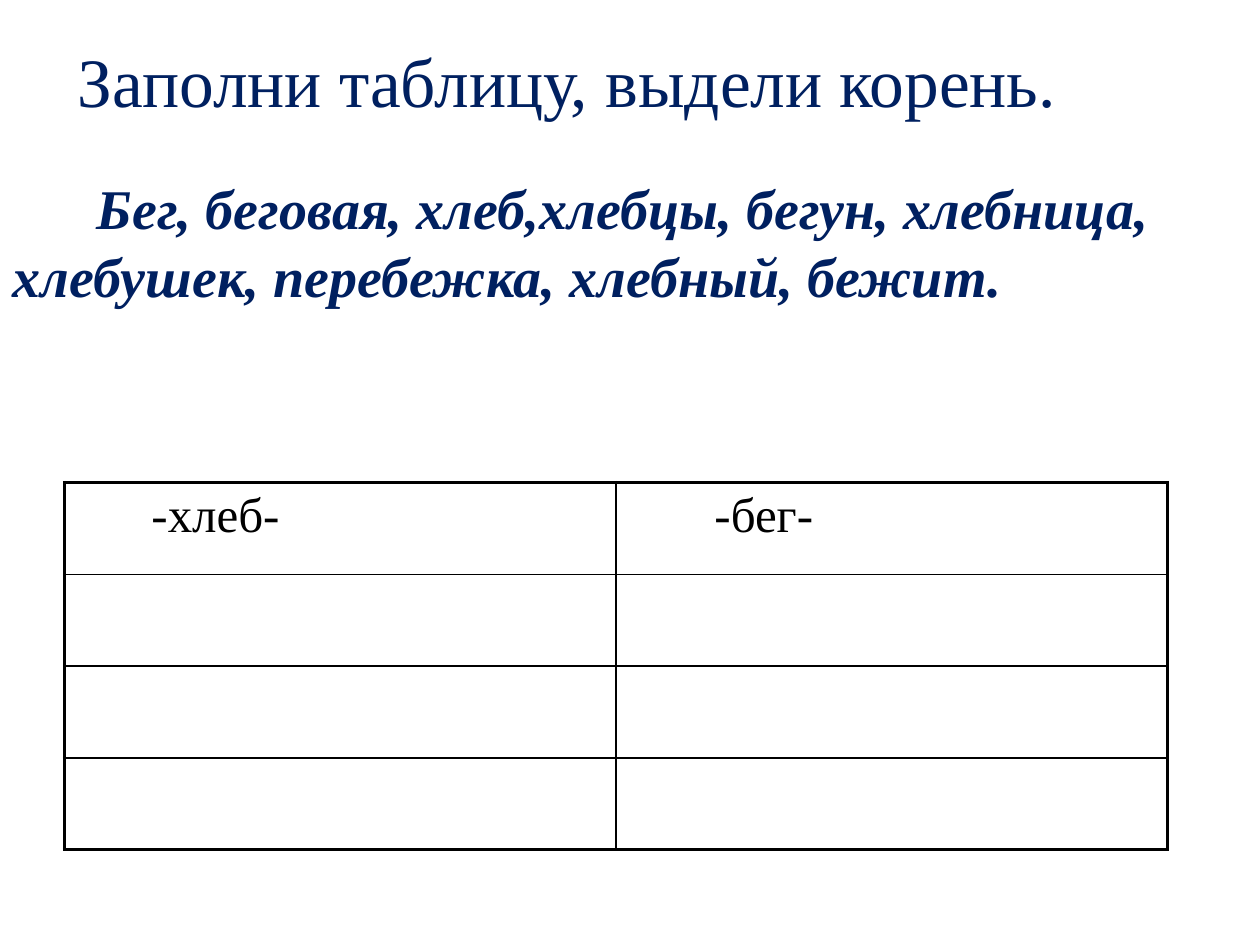
from lxml.etree import SubElement
from pptx import Presentation
from pptx.dml.color import RGBColor
from pptx.enum.text import MSO_ANCHOR as Anchor, PP_ALIGN as Align
from pptx.oxml.ns import qn
from pptx.util import Cm, Pt

FONT = "Times New Roman"
NAVY = "002060"
BLACK = "000000"
THIN, THICK = 1, 2.25
ROWS, COLUMNS = 4, 2


def color(value):
    return RGBColor.from_string(value)


def add_run(para, text, size, shade, bold=False, italic=False):
    span = para.add_run()
    span.text = text
    font = span.font
    font.name, font.size = FONT, Pt(size)
    font.bold, font.italic = bold, italic
    font.color.rgb = color(shade)


def indent_first_line(para, indent):
    props = para._p.get_or_add_pPr()
    props.set("marL", "0")
    props.set("indent", str(indent))
    return props


def place(box, left, top, width, height):
    box.left, box.top, box.width, box.height = map(Cm, (left, top, width, height))


def fill_title(box, text):
    place(box, 0, 0.76, 22.86, 3.17)
    frame = box.text_frame
    frame.vertical_anchor = Anchor.TOP
    frame.margin_top = 0
    para = frame.paragraphs[0]
    para.alignment = Align.CENTER
    add_run(para, text, 39.6, NAVY)


def fill_words(box, text):
    place(box, 0, 3.38, 24.61, 15.09)
    para = box.text_frame.paragraphs[0]
    SubElement(indent_first_line(para, Cm(1.7)), qn("a:buNone"))
    add_run(para, text, 32, NAVY, bold=True, italic=True)


def set_borders(cell, row, column):
    # Outer edges are thick, inner ones thin
    outer = {"L": column == 0, "R": column == COLUMNS - 1,
             "T": row == 0, "B": row == ROWS - 1}
    props = cell._tc.get_or_add_tcPr()
    for side, is_outer in outer.items():
        width = Pt(THICK if is_outer else THIN)
        line = SubElement(props, qn(f"a:ln{side}"), w=str(width))
        fill = SubElement(line, qn("a:solidFill"))
        SubElement(fill, qn("a:srgbClr"), val=BLACK)


def add_root_table(page, headings):
    frame = page.shapes.add_table(ROWS, COLUMNS, Cm(1.3), Cm(9.73), Cm(22.24), Cm(7.4))
    table = frame.table
    table.first_row = table.horz_banding = False
    for row in range(ROWS):
        for column in range(COLUMNS):
            cell = table.cell(row, column)
            set_borders(cell, row, column)
            cell.fill.background()
    for column, (text, indent) in enumerate(headings):
        para = table.cell(0, column).text_frame.paragraphs[0]
        indent_first_line(para, Cm(indent))
        add_run(para, text, 28, BLACK)


def main():
    deck = Presentation()
    deck.slide_width, deck.slide_height = Cm(25.4), Cm(19.05)
    page = deck.slides.add_slide(deck.slide_layouts[1])

    # Task and the words to sort
    fill_title(page.shapes.title, "Заполни таблицу, выдели корень.")
    fill_words(page.placeholders[1],
               "Бег, беговая, хлеб,хлебцы, бегун, хлебница, "
               "хлебушек, перебежка, хлебный, бежит.")

    # One column for each root
    add_root_table(page, [("-хлеб-", 1.5), ("-бег-", 1.73)])
    deck.save("out.pptx")


if __name__ == "__main__":
    main()
